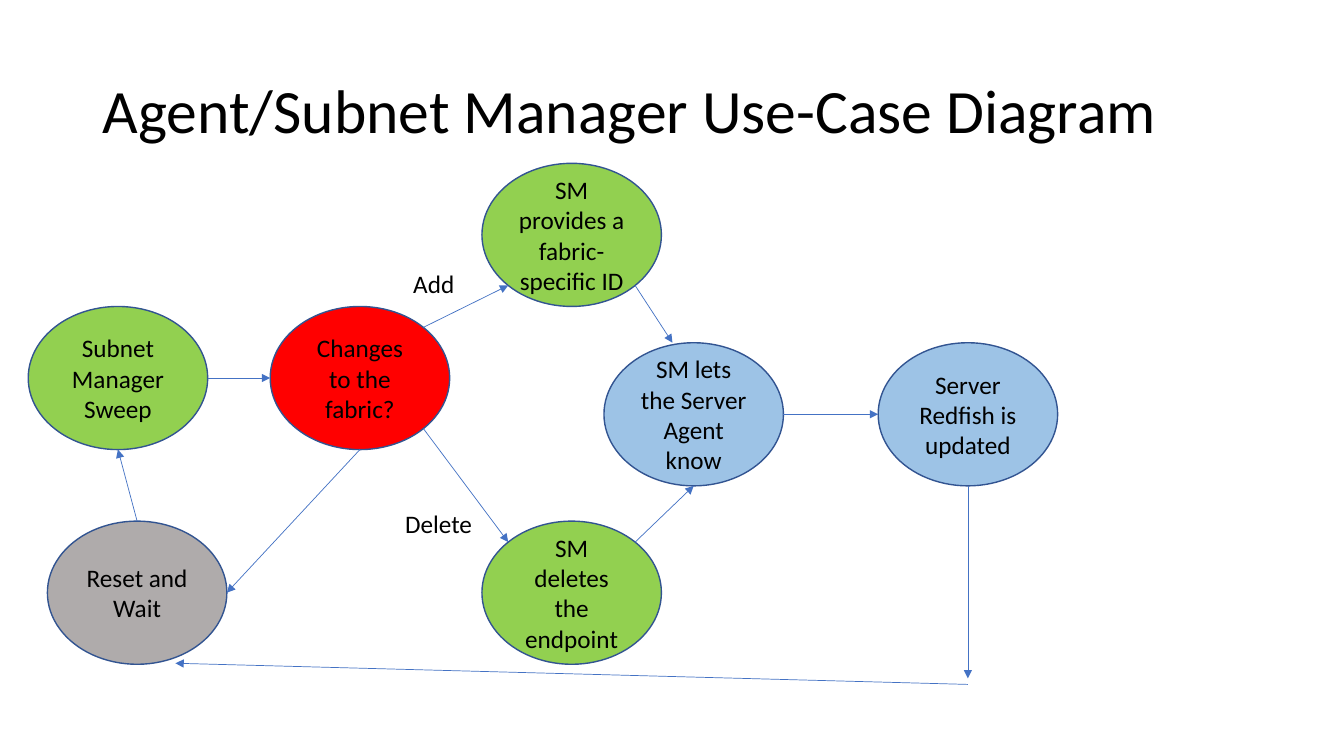
from math import cos, radians, sin

from lxml import etree
from pptx import Presentation
from pptx.dml.color import RGBColor
from pptx.enum import shapes, text
from pptx.oxml import ns
from pptx.util import Inches, Pt

# Content
TITLE = "Agent/Subnet Manager Use-Case Diagram"
GREEN, RED, GRAY, BLUE = "92D050", "FF0000", "AFABAB", "9DC3E6"
OUTLINE, ARROW, BLACK = "325491", "4472C4", "000000"
NODE_W, NODE_H = 1.78, 1.42

# name: (left, top, fill, paragraphs)
NODES = {
    "sweep": (0.28, 3.04, GREEN, ["Subnet Manager", "Sweep"]),
    "changes": (2.68, 3.04, RED, ["Changes to the fabric?"]),
    "add": (4.78, 1.62, GREEN, ["SM provides a fabric-specific ID"]),
    "delete": (4.78, 5.17, GREEN, ["SM deletes the endpoint"]),
    "reset": (0.47, 5.17, GRAY, ["Reset and Wait"]),
    "agent": (5.99, 3.4, BLUE, ["SM lets the Server Agent know"]),
    "updated": (8.71, 3.4, BLUE, ["Server Redfish is updated"]),
}

# Angles of the points on an ellipse, clockwise from the right
ANGLES = {"right": 0, "lower right": 45, "bottom": 90, "lower left": 135,
          "left": 180, "upper left": 225, "top": 270, "upper right": 315}

# Each end is (node, side) or a free (x, y) point
ARROWS = [
    (("changes", "bottom"), ("reset", "right")),
    (("reset", "top"), ("sweep", "bottom")),
    (("changes", "lower right"), ("delete", "upper left")),
    (("changes", "upper right"), ("add", "lower left")),
    (("sweep", "right"), ("changes", "left")),
    (("add", "lower right"), (6.67, 3.4)),
    (("delete", "upper right"), ("agent", "bottom")),
    (("agent", "right"), ("updated", "left")),
    ((9.6, 6.79), (1.74, 6.58)),
    (("updated", "bottom"), (9.6, 6.73)),
]
LABELS = [("Add", 4, 2.61), ("Delete", 3.92, 4.99)]


def rgb(value):
    return RGBColor.from_string(value)


def write(shape, lines, size=18, color=BLACK, align=text.PP_ALIGN.LEFT,
          anchor=text.MSO_ANCHOR.TOP, spacing=None):
    tf = shape.text_frame
    tf.word_wrap = True
    tf.vertical_anchor = anchor
    for i, line in enumerate(lines):
        p = tf.add_paragraph() if i else tf.paragraphs[0]
        p.alignment = align
        p.line_spacing = spacing
        r = p.add_run()
        r.text = line
        r.font.name = "Calibri"
        r.font.size = Pt(size)
        r.font.color.rgb = rgb(color)


def add_text(s, box, lines, **fmt):
    write(s.shapes.add_textbox(*map(Inches, box)), lines, **fmt)


def add_node(s, left, top, fill, lines):
    sp = s.shapes.add_shape(shapes.MSO_SHAPE.OVAL,
                            *map(Inches, (left, top, NODE_W, NODE_H)))
    sp.shadow.inherit = False
    sp.fill.solid()
    sp.fill.fore_color.rgb = rgb(fill)
    sp.line.color.rgb = rgb(OUTLINE)
    sp.line.width = Pt(1)
    write(sp, lines, align=text.PP_ALIGN.CENTER, anchor=text.MSO_ANCHOR.MIDDLE)


def locate(end):
    if end[0] not in NODES:
        return end
    node, side = end
    left, top = NODES[node][:2]
    angle = radians(ANGLES[side])
    return (left + NODE_W / 2 * (1 + cos(angle)),
            top + NODE_H / 2 * (1 + sin(angle)))


def add_arrow(s, start, end):
    points = map(Inches, locate(start) + locate(end))
    c = s.shapes.add_connector(shapes.MSO_CONNECTOR.STRAIGHT, *points)
    c.line.color.rgb = rgb(ARROW)
    c.line.width = Pt(0.5)
    etree.SubElement(c.line._get_or_add_ln(), ns.qn("a:tailEnd"), type="triangle")
    etree.SubElement(c._element.spPr, ns.qn("a:effectLst"))


def main():
    prs = Presentation()
    prs.slide_width, prs.slide_height = Inches(13.33), Inches(7.5)
    s = prs.slides.add_slide(prs.slide_layouts[6])

    # Title
    add_text(s, (0.92, 0.4, 11.5, 1.45), [TITLE], size=44,
             anchor=text.MSO_ANCHOR.MIDDLE, spacing=0.9)

    # Diagram
    for node in NODES.values():
        add_node(s, *node)
    for start, end in ARROWS:
        add_arrow(s, start, end)
    for label, left, top in LABELS:
        add_text(s, (left, top, 1.21, 0.4), [label])

    prs.save("out.pptx")


if __name__ == "__main__":
    main()
